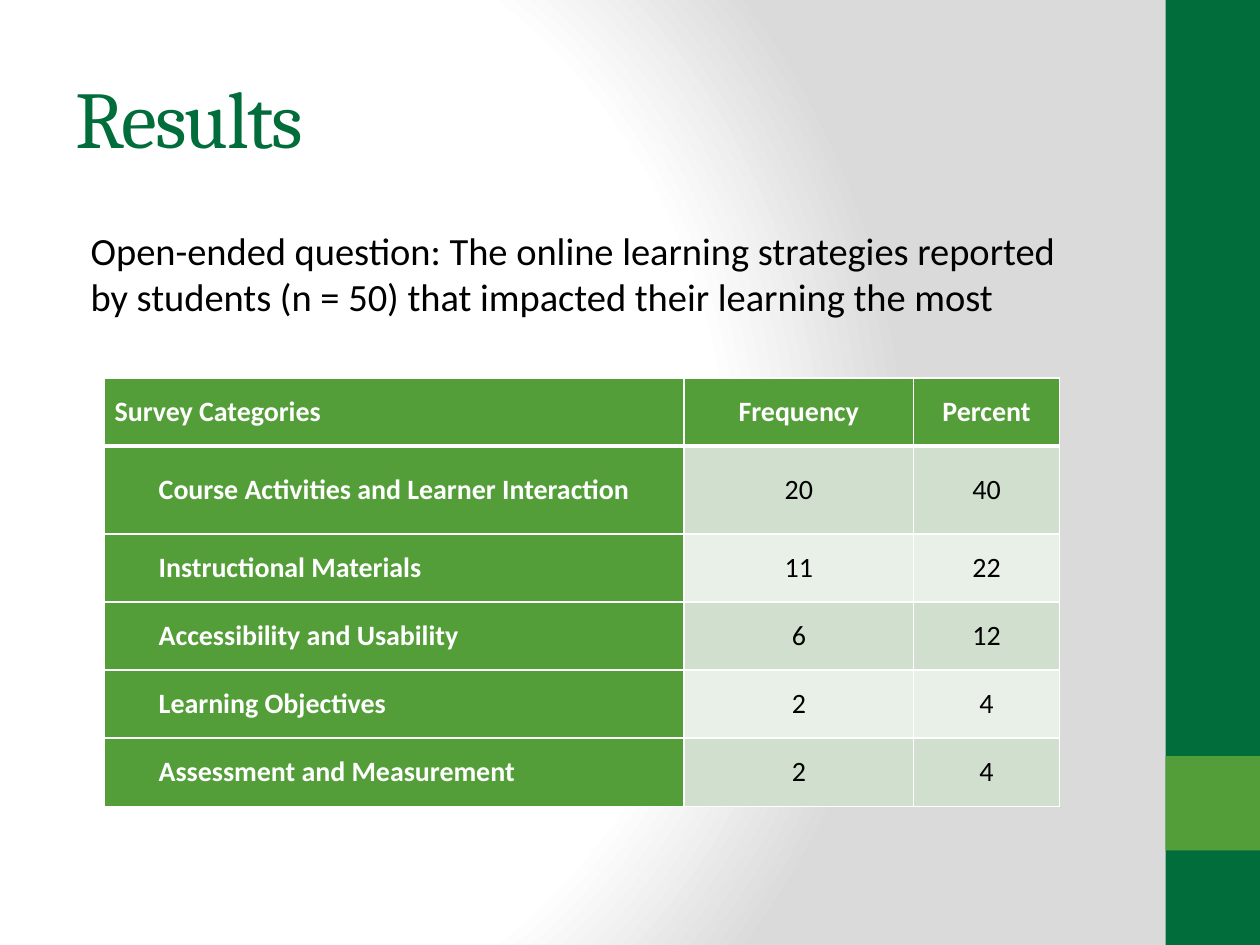
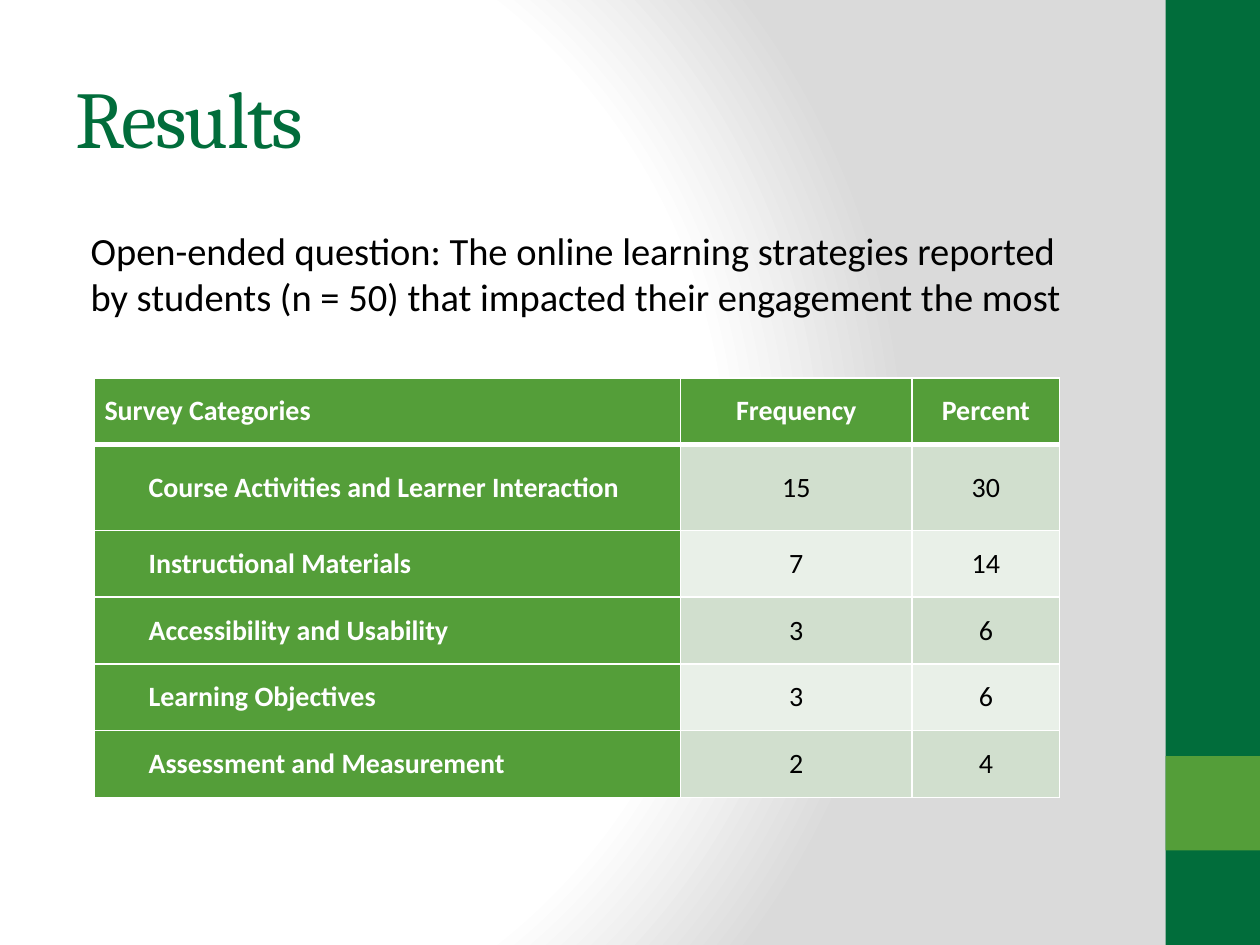
"""Build two survey result slides with a shared title, side band and table style."""
from lxml import etree
from pptx import Presentation
from pptx.dml.color import RGBColor
from pptx.enum import shapes, text
from pptx.oxml import parse_xml
from pptx.oxml.ns import nsdecls, qn
from pptx.util import Inches, Pt

DARK_GREEN = RGBColor(0x01, 0x6D, 0x3B)
GREEN = RGBColor(0x54, 0x9E, 0x39)
PALE_GREEN = RGBColor(0xD1, 0xDF, 0xCE)
PALEST_GREEN = RGBColor(0xE9, 0xF0, 0xE8)
WHITE = RGBColor(0xFF, 0xFF, 0xFF)
BLACK = RGBColor(0x00, 0x00, 0x00)
GREY = RGBColor(0xDA, 0xDA, 0xDA)

HEADINGS = ["Survey Categories", "Frequency", "Percent"]
CATEGORIES = [
    "Course Activities and Learner Interaction",
    "Instructional Materials",
    "Accessibility and Usability",
    "Learning Objectives",
    "Assessment and Measurement",
]
RESULTS = [
    {
        "outcome": "learning",
        "frequencies": [20, 11, 6, 2, 2],
        "percents": [40, 22, 12, 4, 4],
        "left": 0.83,
        "columns": [4.6, 1.82, 1.16],
        "rows": [0.54, 0.7] + [0.54] * 4,
    },
    {
        "outcome": "engagement",
        "frequencies": [15, 7, 3, 3, 2],
        "percents": [30, 14, 6, 6, 4],
        "left": 0.75,
        "columns": [4.65, 1.84, 1.17],
        "rows": [0.53, 0.68] + [0.53] * 4,
    },
]


def write(frame, words, font_name, size, color, bold=False):
    """Put one formatted paragraph in a text frame and return it."""
    frame.text = words
    paragraph = frame.paragraphs[0]
    font = paragraph.runs[0].font
    font.name, font.size, font.bold = font_name, Pt(size), bold
    font.color.rgb = color
    return paragraph


def add_borders(cell, widths):
    """Draw white cell borders, with widths in points keyed by side."""
    properties = cell._tc.get_or_add_tcPr()
    for side, width in widths.items():
        line = etree.SubElement(properties, qn(f"a:ln{side}"), w=str(Pt(width)))
        fill = etree.SubElement(line, qn("a:solidFill"))
        etree.SubElement(fill, qn("a:srgbClr"), val=str(WHITE))


prs = Presentation()
prs.slide_width, prs.slide_height = Inches(10), Inches(7.5)

backdrop = prs.slide_master.background.fill
backdrop.gradient()
master_gradient = next(prs.slide_master._element.iter(qn("a:gradFill")))
stops = "".join(
    f'<a:gs pos="{position * 1000}"><a:srgbClr val="{color}"/></a:gs>'
    for position, color in [(0, WHITE), (75, WHITE), (100, GREY)]
)
master_gradient.getparent().replace(master_gradient, parse_xml(
    f'<a:gradFill {nsdecls("a")} rotWithShape="1"><a:gsLst>{stops}</a:gsLst>'
    '<a:path path="circle"><a:fillToRect l="20000" t="50000" r="100000" b="50000"/>'
    "</a:path></a:gradFill>"
))

for result in RESULTS:
    slide = prs.slides.add_slide(prs.slide_layouts[6])

    for top, height, color in [(0, 7.5, DARK_GREEN), (6, 0.75, GREEN)]:
        band = slide.shapes.add_shape(
            shapes.MSO_SHAPE.RECTANGLE,
            Inches(9.25), Inches(top), Inches(0.75), Inches(height),
        )
        band.shadow.inherit = False
        band.fill.solid()
        band.fill.fore_color.rgb = color
        band.line.fill.background()

    title = slide.shapes.add_textbox(
        Inches(0.5), Inches(0.3), Inches(8.33), Inches(1.25)
    ).text_frame
    title.word_wrap = True
    title.vertical_anchor = text.MSO_ANCHOR.MIDDLE
    heading = write(title, "Results", "Cambria", 46, DARK_GREEN)
    heading.runs[0]._r.get_or_add_rPr().set("spc", "-100")

    question = slide.shapes.add_textbox(
        Inches(0.5), Inches(1.75), Inches(8.33), Inches(5.25)
    ).text_frame
    question.word_wrap = True
    question.margin_left = Inches(0.22)
    prompt = write(
        question,
        "Open-ended question: The online learning strategies reported by students "
        f"(n = 50) that impacted their {result['outcome']} the most",
        "Calibri", 22, BLACK,
    )
    prompt.space_before = Pt(4.4)

    records = [HEADINGS, *zip(CATEGORIES, result["frequencies"], result["percents"])]
    survey = slide.shapes.add_table(
        len(records), len(HEADINGS), Inches(result["left"]), Inches(3),
        Inches(sum(result["columns"])), Inches(sum(result["rows"])),
    ).table
    for column, width in zip(survey.columns, result["columns"]):
        column.width = Inches(width)
    for row, height in zip(survey.rows, result["rows"]):
        row.height = Inches(height)

    for r, record in enumerate(records):
        for c, value in enumerate(record):
            cell = survey.cell(r, c)
            is_label = r == 0 or c == 0
            is_category = r > 0 and c == 0
            cell.vertical_anchor = text.MSO_ANCHOR.MIDDLE
            cell.margin_left = Inches(0.43 if is_category else 0.08)
            cell.margin_right = Inches(0.08)
            cell.margin_top = cell.margin_bottom = Inches(0.02)
            entry = write(
                cell.text_frame, str(value), "Calibri", 16,
                WHITE if is_label else BLACK, bold=is_label,
            )
            if c > 0:
                entry.alignment = text.PP_ALIGN.CENTER
            add_borders(cell, {
                "L": 1, "R": 1, "T": 3 if r == 1 else 1, "B": 3 if r == 0 else 1,
            })
            cell.fill.solid()
            band_color = PALE_GREEN if r % 2 else PALEST_GREEN
            cell.fill.fore_color.rgb = GREEN if is_label else band_color

prs.save("out.pptx")
